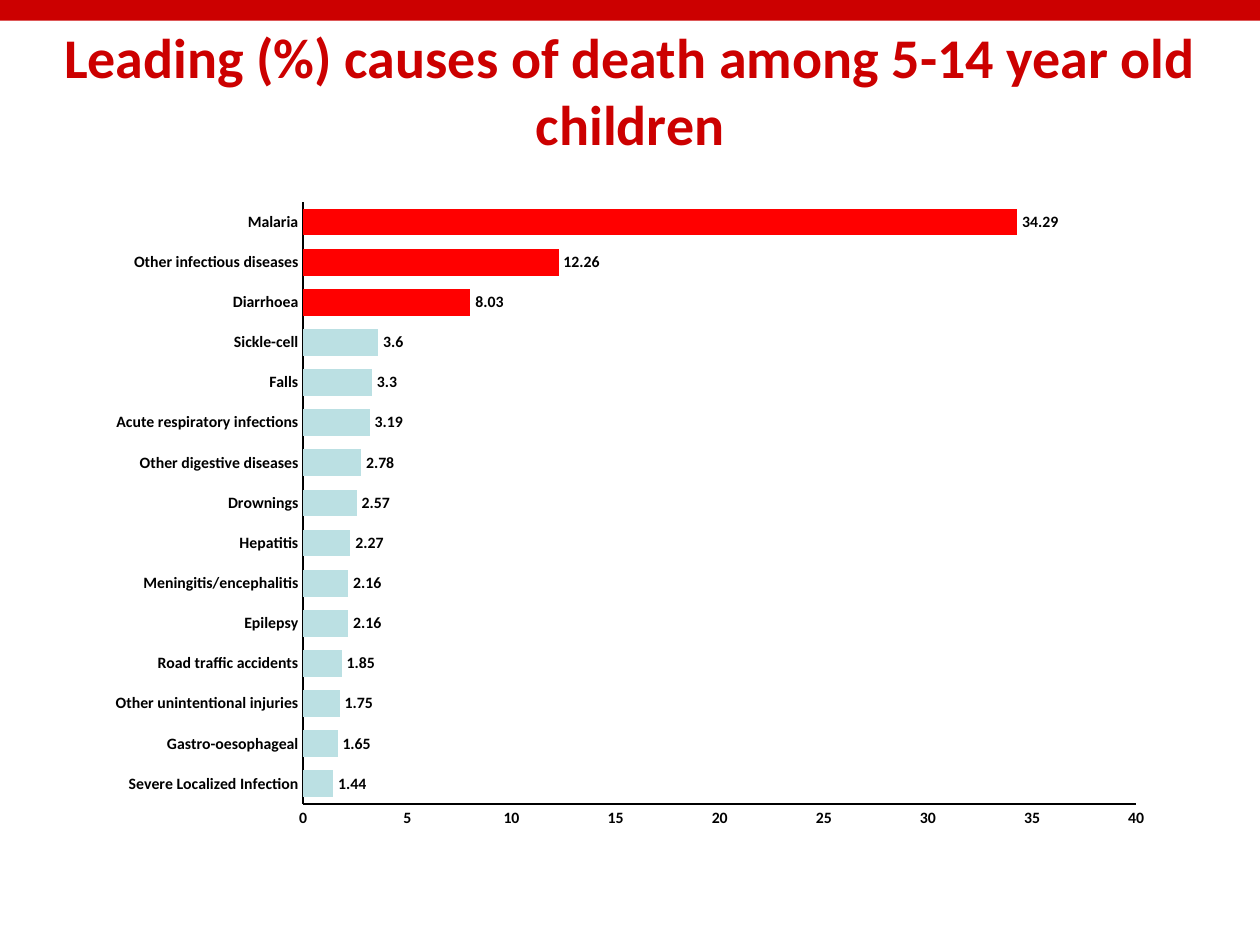
import pptx
import pptx.chart.data
import pptx.dml.color
import pptx.enum.chart
import pptx.enum.shapes
import pptx.enum.text
import pptx.util
from pptx.util import Cm

FONT = "Calibri"
RED = "CC0000"
HIGHLIGHT = "FF0000"
PALE_BLUE = "BBE0E3"
BLACK = "000000"

# Ordered from the bottom bar to the top bar
causes = {
    "Severe Localized Infection": 1.44,
    "Gastro-oesophageal": 1.65,
    "Other unintentional injuries": 1.75,
    "Road traffic accidents": 1.85,
    "Epilepsy": 2.16,
    "Meningitis/encephalitis": 2.16,
    "Hepatitis": 2.27,
    "Drownings": 2.57,
    "Other digestive diseases": 2.78,
    "Acute respiratory infections": 3.19,
    "Falls": 3.3,
    "Sickle-cell": 3.6,
    "Diarrhoea": 8.03,
    "Other infectious diseases": 12.26,
    "Malaria": 34.29,
}
highlighted = ("Diarrhoea", "Other infectious diseases", "Malaria")


def paint(fill, color):
    fill.solid()
    fill.fore_color.rgb = pptx.dml.color.RGBColor.from_string(color)


def style_font(font, size, color, bold=True):
    font.name = FONT
    font.size = pptx.util.Pt(size)
    font.bold = bold
    paint(font.fill, color)


deck = pptx.Presentation()
deck.slide_width, deck.slide_height = Cm(25.4), Cm(19.05)
page = deck.slides.add_slide(deck.slide_layouts[5])

# Top band
band = page.shapes.add_shape(
    pptx.enum.shapes.MSO_SHAPE.RECTANGLE, 0, 0, deck.slide_width, Cm(0.42))
band.shadow.inherit = False
paint(band.fill, RED)
band.line.fill.background()

# Title
title = page.shapes.title
title.left, title.top, title.width, title.height = Cm(0.64), Cm(0.85), Cm(24.13), Cm(1.9)
frame = title.text_frame
frame.text = "Leading (%) causes of death among 5-14 year old children"
frame.word_wrap = True
frame.auto_size = pptx.enum.text.MSO_AUTO_SIZE.NONE
frame.vertical_anchor = pptx.enum.text.MSO_ANCHOR.MIDDLE
para = frame.paragraphs[0]
para.alignment = pptx.enum.text.PP_ALIGN.CENTER
style_font(para.runs[0].font, 32, RED)

# Bar chart
data = pptx.chart.data.CategoryChartData()
data.categories = list(causes)
data.add_series("Series 1", list(causes.values()))
chart = page.shapes.add_chart(
    pptx.enum.chart.XL_CHART_TYPE.BAR_CLUSTERED,
    Cm(1.9), Cm(3.81), Cm(21.6), Cm(13.13), data).chart
chart.has_legend = False
chart.has_title = False
style_font(chart.font, 10, BLACK, bold=False)

for axis in (chart.category_axis, chart.value_axis):
    axis.has_major_gridlines = False
    axis.major_tick_mark = pptx.enum.chart.XL_TICK_MARK.NONE
    axis.minor_tick_mark = pptx.enum.chart.XL_TICK_MARK.NONE
    axis.format.line.width = pptx.util.Pt(1)
    paint(axis.format.line.fill, BLACK)
    style_font(axis.tick_labels.font, 9, BLACK)
chart.value_axis.minimum_scale = 0
chart.value_axis.maximum_scale = 40
chart.value_axis.major_unit = 5

plot = chart.plots[0]
plot.gap_width = 50
plot.vary_by_categories = False
bars = plot.series[0]
paint(bars.format.fill, PALE_BLUE)
for index, cause in enumerate(causes):
    if cause in highlighted:
        paint(bars.points[index].format.fill, HIGHLIGHT)

labels = bars.data_labels
labels.show_value = True
labels.position = pptx.enum.chart.XL_LABEL_POSITION.OUTSIDE_END
style_font(labels.font, 9, BLACK)

deck.save("out.pptx")
